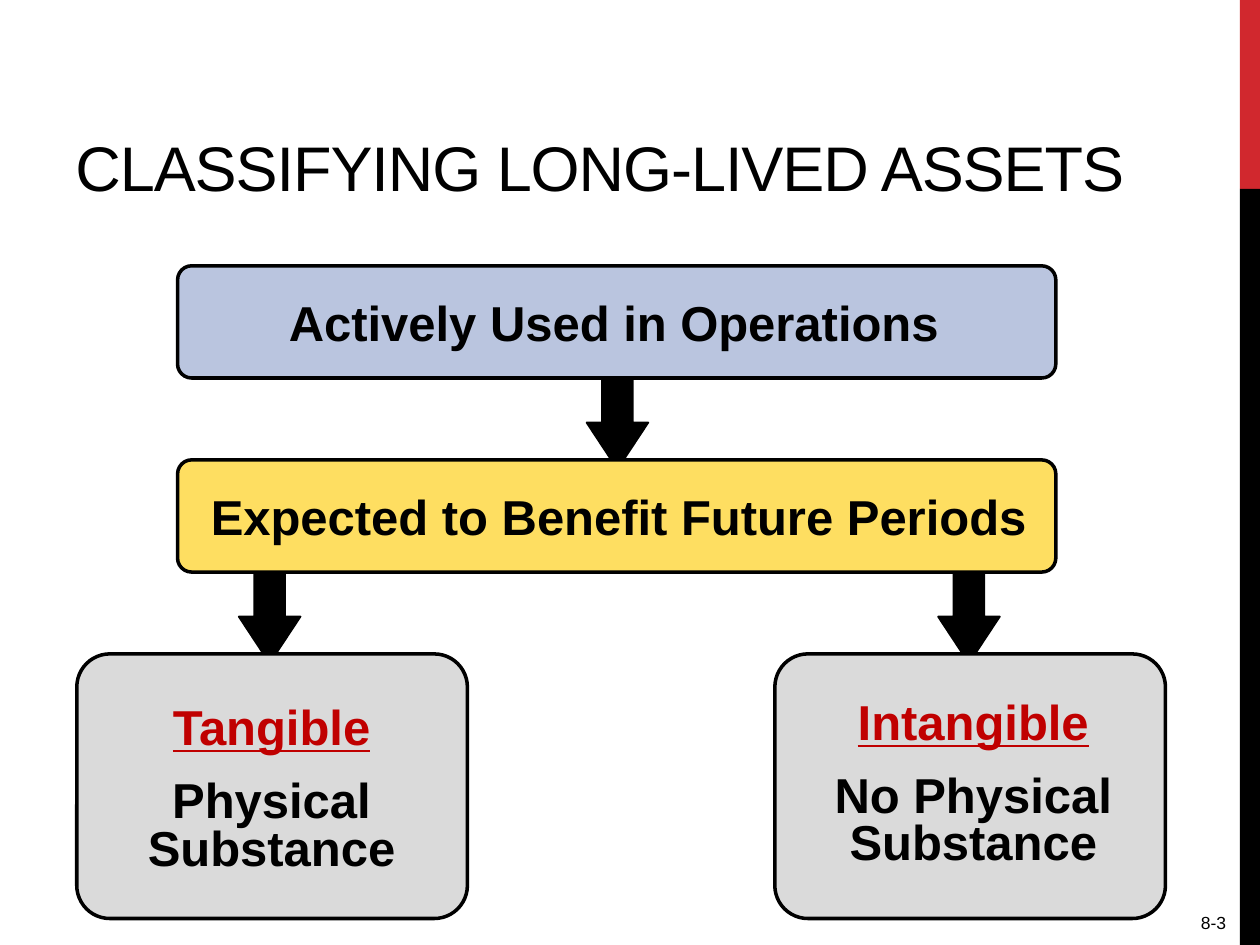
import pptx
import pptx.dml.color
import pptx.enum.shapes
import pptx.enum.text
import pptx.util

Inches = pptx.util.Inches
Pt = pptx.util.Pt
Shape = pptx.enum.shapes.MSO_SHAPE
Anchor = pptx.enum.text.MSO_ANCHOR
Align = pptx.enum.text.PP_ALIGN

WIDTH, HEIGHT = 10, 7.5
COLORS = {
    "black": "000000", "red": "D1282E", "heading": "C00000",
    "blue": "BAC5DF", "yellow": "FEDE61", "gray": "DADADA",
}
TITLE = "CLASSIFYING LONG-LIVED ASSETS"
NUMBER = "8-3"
CRITERIA = [
    ("Actively Used in Operations ", "blue", (2.16, 5.53)),
    ("Expected to Benefit Future Periods", "yellow", (1.53, 6.76)),
]
CLASSES = [
    ("Tangible", ["Physical", "Substance"], 0.61, (1.06, 5.57, 2.19, 1.47)),
    ("Intangible", ["No Physical", "Substance"], 6.15, (6.51, 5.53, 2.43, 1.47)),
]
BAR_LEFT, BAR_TOP, BAR_WIDTH, BAR_HEIGHT = 1.41, 2.11, 6.97, 0.89
ROW_STEP = 1.54
CARD_WIDTH, CARD_HEIGHT = 3.1, 2.1
LABEL_HEIGHT = 0.57
ARROW_WIDTH, ARROW_HEIGHT = 0.49, 0.74
ARROW_CENTERS = [[4.9], [2.14, 7.69]]
STRIPE_WIDTH, STRIPE_SHARE = 0.16, 0.2


def color(name):
    return pptx.dml.color.RGBColor.from_string(COLORS[name])


def add_block(page, kind, place, fill, line=None, adjustments=()):
    block = page.shapes.add_shape(kind, *map(Inches, place))
    block.shadow.inherit = False
    block.fill.solid()
    block.fill.fore_color.rgb = color(fill)
    if line:
        block.line.color.rgb = color("black")
        block.line.width = Pt(line)
    else:
        block.line.fill.background()
    for index, value in enumerate(adjustments):
        block.adjustments[index] = value
    return block


def add_text(page, place, paragraphs, size=28, bold=True, align=Align.CENTER,
             anchor=Anchor.TOP, wrap=False, spacing=None, before=None):
    box = page.shapes.add_textbox(*map(Inches, place))
    frame = box.text_frame
    frame.word_wrap = wrap
    frame.vertical_anchor = anchor
    for index, (lines, tint, underline) in enumerate(paragraphs):
        para = frame.add_paragraph() if index else frame.paragraphs[0]
        para.alignment = align
        if spacing:
            para.line_spacing = spacing
            para.space_before = Pt(before)
        for number, line in enumerate(lines):
            if number:
                para.add_line_break()
            span = para.add_run()
            span.text = line
            span.font.name = "Arial"
            span.font.size = Pt(size)
            span.font.bold = bold
            span.font.underline = underline
            span.font.color.rgb = color(tint)
    return box


def add_arrows(page, row):
    middle = BAR_TOP + row * ROW_STEP + (BAR_HEIGHT + ROW_STEP) / 2 + 0.03
    for center in ARROW_CENTERS[row]:
        place = (center - ARROW_WIDTH / 2, middle - ARROW_HEIGHT / 2,
                 ARROW_WIDTH, ARROW_HEIGHT)
        add_block(page, Shape.DOWN_ARROW, place, "black", 1, (0.5, 0.757))


def main():
    deck = pptx.Presentation()
    deck.slide_width, deck.slide_height = Inches(WIDTH), Inches(HEIGHT)
    page = deck.slides.add_slide(deck.slide_layouts[6])

    stripe_left, split = WIDTH - STRIPE_WIDTH, HEIGHT * STRIPE_SHARE
    for tint, top, height in [("red", 0, split), ("black", split, HEIGHT - split)]:
        add_block(page, Shape.RECTANGLE, (stripe_left, top, STRIPE_WIDTH, height), tint)

    for row in range(len(CRITERIA)):
        add_arrows(page, row)

    for row, (label, tint, (label_left, label_width)) in enumerate(CRITERIA):
        top = BAR_TOP + row * ROW_STEP
        add_block(page, Shape.ROUNDED_RECTANGLE,
                  (BAR_LEFT, top, BAR_WIDTH, BAR_HEIGHT), tint, 2, (0.125,))
        label_top = top + (BAR_HEIGHT - LABEL_HEIGHT) / 2
        add_text(page, (label_left, label_top, label_width, LABEL_HEIGHT),
                 [([label], "black", False)], anchor=Anchor.MIDDLE)

    card_top = BAR_TOP + len(CRITERIA) * ROW_STEP
    for heading, lines, left, label_place in CLASSES:
        add_block(page, Shape.ROUNDED_RECTANGLE,
                  (left, card_top, CARD_WIDTH, CARD_HEIGHT), "gray", 2, (0.125,))
        add_text(page, label_place,
                 [([heading], "heading", True), (lines, "black", False)],
                 spacing=0.8, before=15)

    title = add_text(page, (0.5, 0.17, 9.17, 1.5), [([TITLE], "black", False)],
                     size=36, bold=False, align=Align.LEFT,
                     anchor=Anchor.BOTTOM, wrap=True)
    title.text_frame.paragraphs[0].runs[0].font._element.set("spc", "-60")
    add_text(page, (8, 7.19, 1.83, 0.31), [([NUMBER], "black", False)],
             size=10, bold=False, align=Align.RIGHT, wrap=True)
    deck.save("out.pptx")


if __name__ == "__main__":
    main()
